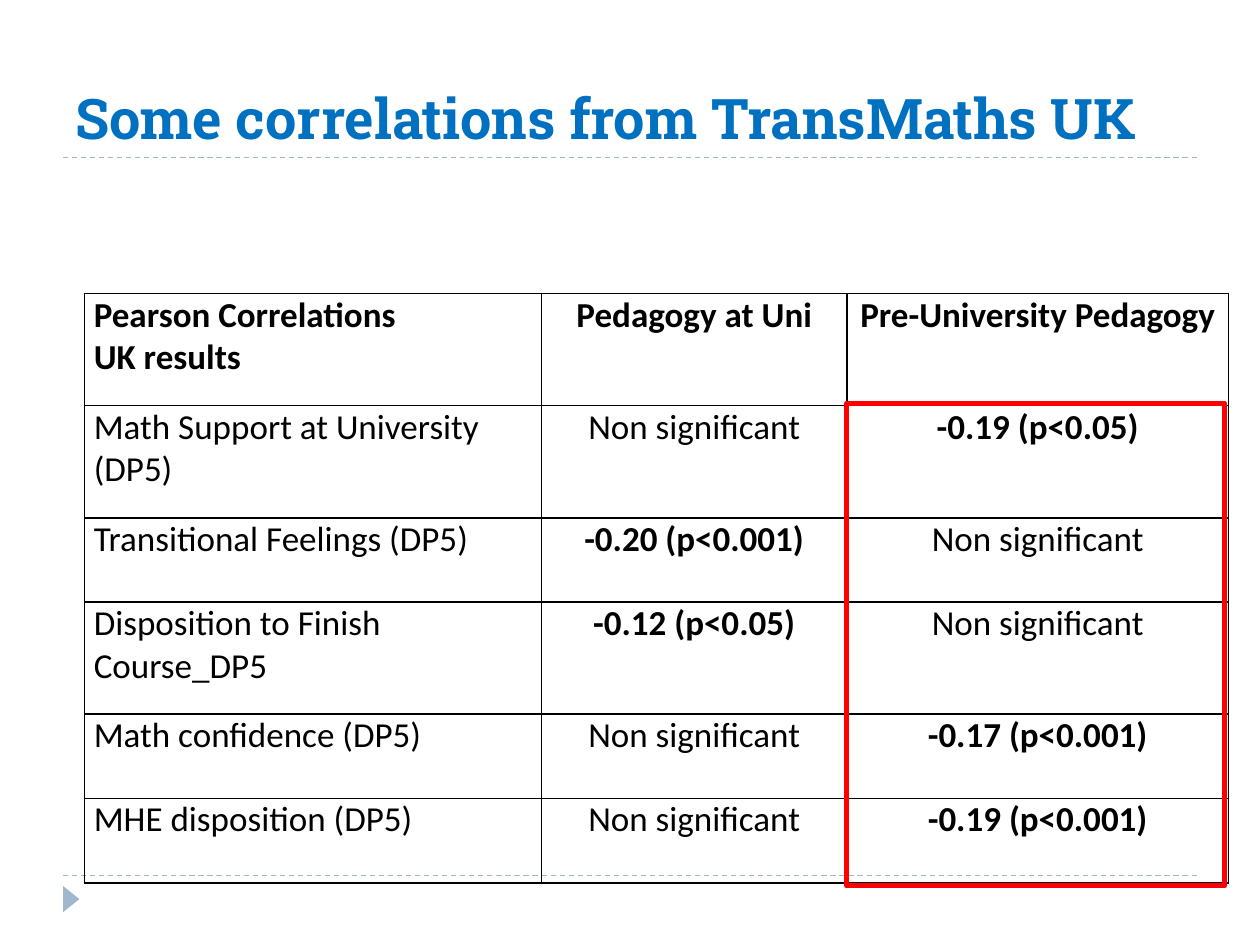
from lxml.etree import SubElement
from pptx import Presentation
from pptx.dml.color import RGBColor
from pptx.enum.dml import MSO_LINE_DASH_STYLE as Dash
from pptx.enum.shapes import MSO_CONNECTOR_TYPE as Connector, MSO_SHAPE as Shape
from pptx.enum.text import MSO_ANCHOR as Anchor, PP_ALIGN as Align
from pptx.oxml.ns import qn
from pptx.util import Cm, Pt

BLUE = RGBColor(0x00, 0x70, 0xC0)
PALE_BLUE = RGBColor(0x9F, 0xB8, 0xCD)
RED = RGBColor(0xFF, 0x00, 0x00)
BLACK = RGBColor(0x00, 0x00, 0x00)

TITLE_FONT = {"name": "Roboto Slab", "size": Pt(32), "bold": True}
CELL_FONT = {"name": "Calibri", "size": Pt(20)}
CELL_FORMAT = {"margin_left": Cm(0.19), "margin_right": Cm(0.19),
               "margin_top": 0, "margin_bottom": 0,
               "vertical_anchor": Anchor.TOP}

COLUMN_WIDTHS = [9.22, 6.15, 7.7]
ROW_HEIGHTS = [2.26, 2.26, 1.7, 2.26, 1.7, 1.7]
CORRELATIONS = [
    ["Pearson Correlations\nUK results", "Pedagogy at Uni", "Pre-University Pedagogy"],
    ["Math Support at University (DP5)", "Non significant", "-0.19 (p<0.05)"],
    ["Transitional Feelings (DP5)", "-0.20 (p<0.001)", "Non significant"],
    ["Disposition to Finish Course_DP5", "-0.12 (p<0.05)", "Non significant"],
    ["Math confidence (DP5)", "Non significant", "-0.17 (p<0.001)"],
    ["MHE disposition (DP5)", "Non significant", "-0.19 (p<0.001)"],
]


def set_attributes(target, values):
    for name, value in values.items():
        setattr(target, name, value)


class SlideBuilder:
    def __init__(self, slide):
        self.slide = slide
        self.shapes = slide.shapes

    def fill_text(self, frame, text, font, color, align=Align.LEFT):
        frame.text = text
        for paragraph in frame.paragraphs:
            paragraph.alignment = align
            for run in paragraph.runs:
                set_attributes(run.font, font)
                run.font.color.rgb = color

    def title(self, text, left, top, width, height):
        box = self.shapes.add_textbox(Cm(left), Cm(top), Cm(width), Cm(height))
        set_attributes(box.text_frame, {"word_wrap": True, "vertical_anchor": Anchor.BOTTOM})
        self.fill_text(box.text_frame, text, TITLE_FONT, BLUE)

    def dashed_rule(self, left, right, y):
        rule = self.shapes.add_connector(Connector.STRAIGHT, Cm(left), Cm(y), Cm(right), Cm(y))
        set_attributes(rule.line, {"width": Pt(0.75), "dash_style": Dash.DASH})
        rule.line.color.rgb = PALE_BLUE
        SubElement(rule._element.spPr, qn("a:effectLst"))

    def shape(self, kind, left, top, width, height, fill=None, line=None, rotation=0):
        shape = self.shapes.add_shape(kind, Cm(left), Cm(top), Cm(width), Cm(height))
        shape.shadow.inherit = False
        shape.rotation = rotation
        if fill is None:
            shape.fill.background()
        else:
            shape.fill.solid()
            shape.fill.fore_color.rgb = fill
        if line is None:
            shape.line.fill.background()
        else:
            shape.line.color.rgb = line
            shape.line.width = Pt(3)

    def cell_borders(self, cell):
        properties = cell._tc.get_or_add_tcPr()
        for index, side in enumerate(("a:lnL", "a:lnR", "a:lnT", "a:lnB")):
            border = SubElement(properties, qn(side), w=str(Pt(1)))
            fill = SubElement(border, qn("a:solidFill"))
            SubElement(fill, qn("a:srgbClr"), val=str(BLACK))
            properties.insert(index, border)

    def table(self, rows, left, top, widths, heights):
        table = self.shapes.add_table(len(rows), len(widths), Cm(left), Cm(top),
                                      Cm(sum(widths)), Cm(sum(heights))).table
        set_attributes(table, {"first_row": False, "horz_banding": False})
        for column, width in zip(table.columns, widths):
            column.width = Cm(width)
        for row, height in zip(table.rows, heights):
            row.height = Cm(height)
        for i, texts in enumerate(rows):
            for j, text in enumerate(texts):
                cell = table.cell(i, j)
                set_attributes(cell, CELL_FORMAT)
                cell.fill.background()
                self.cell_borders(cell)
                # Headings and significant values are bold
                bold = i == 0 or text.startswith("-")
                self.fill_text(cell.text_frame, text, {**CELL_FONT, "bold": bold}, BLACK,
                               Align.CENTER if j else Align.LEFT)


def main():
    presentation = Presentation()
    set_attributes(presentation, {"slide_width": Cm(25.4), "slide_height": Cm(19.05)})
    builder = SlideBuilder(presentation.slides.add_slide(presentation.slide_layouts[6]))

    # Footer and title rules, footer marker
    for y in (17.65, 3.18):
        builder.dashed_rule(1.27, 24.13, y)
    builder.shape(Shape.ISOSCELES_TRIANGLE, 1.17, 17.96, 0.53, 0.33,
                  fill=PALE_BLUE, rotation=90)

    # Title
    builder.title("Some correlations from TransMaths UK", 1.27, 0.43, 24.13, 2.74)

    # Correlations, with the pre-university results framed
    builder.table(CORRELATIONS, 1.7, 5.92, COLUMN_WIDTHS, ROW_HEIGHTS)
    builder.shape(Shape.RECTANGLE, 17.07, 8.13, 7.62, 9.73, line=RED)

    presentation.save("out.pptx")


if __name__ == "__main__":
    main()
